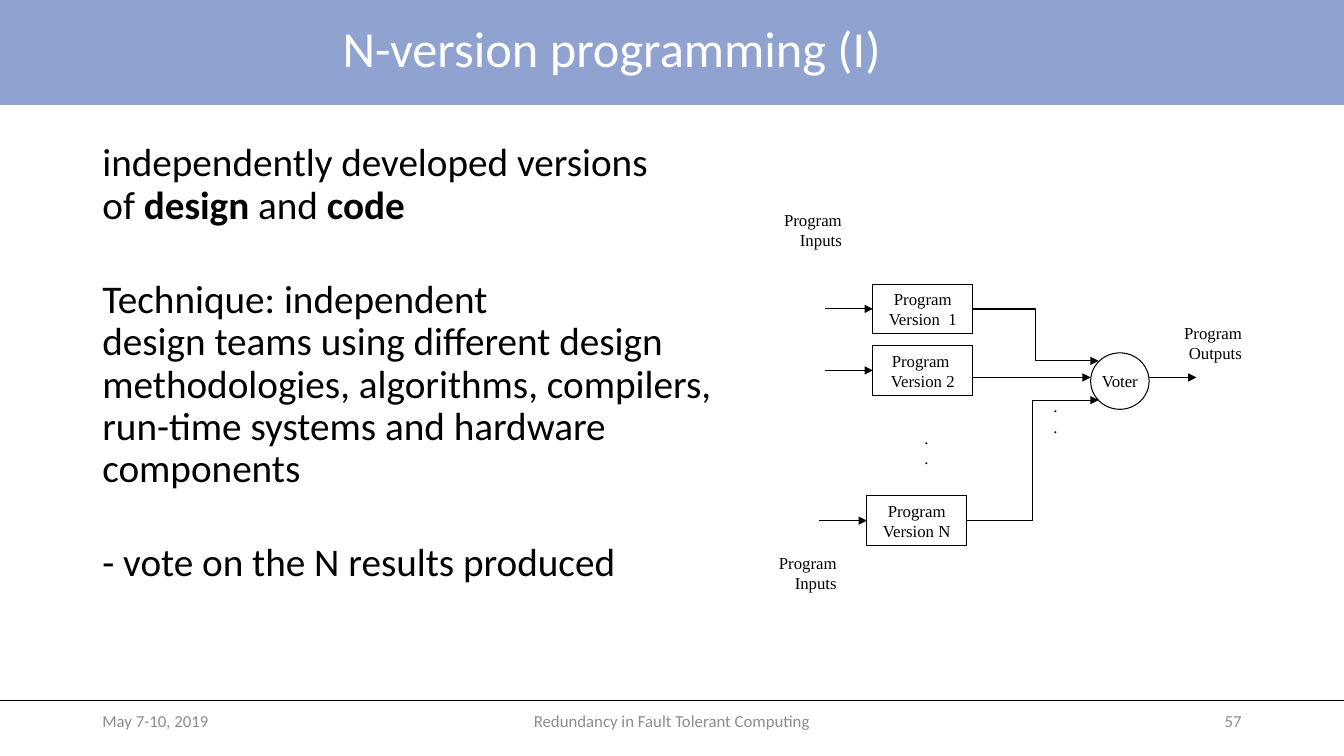
"""Build the N-version programming slide; positions are percentages of the slide size."""
from lxml.etree import SubElement
from pptx import Presentation
from pptx.dml.color import RGBColor
from pptx.enum.shapes import MSO_CONNECTOR, MSO_SHAPE
from pptx.enum.text import MSO_ANCHOR, MSO_AUTO_SIZE, PP_ALIGN
from pptx.oxml.ns import qn
from pptx.util import Inches, Pt

deck = Presentation()
deck.slide_width, deck.slide_height = Inches(13.333), Inches(7.5)
slide = deck.slides.add_slide(deck.slide_layouts[6])
column, row = deck.slide_width / 100, deck.slide_height / 100
BLACK, GREY, WHITE, BLUE = "000000", "8C8C8C", "FFFFFF", "90A2CF"
LEFT, CENTER, RIGHT = PP_ALIGN.LEFT, PP_ALIGN.CENTER, PP_ALIGN.RIGHT


def write(shape, paragraphs, size, font, color, align, wrap=True, anchor=MSO_ANCHOR.MIDDLE):
    frame = shape.text_frame
    frame.word_wrap, frame.vertical_anchor = wrap, anchor
    for index, pieces in enumerate(paragraphs):
        paragraph = frame.add_paragraph() if index else frame.paragraphs[0]
        paragraph.alignment = align
        for text, bold in pieces:
            for line_index, line in enumerate(text.split("\n")):
                if line_index:
                    paragraph.add_line_break()
                run = paragraph.add_run()
                run.text = line
                run.font.size, run.font.name, run.font.bold = Pt(size), font, bold
                run.font.color.rgb = RGBColor.from_string(color)
    return frame


def connect(kind, x1, y1, x2, y2, width=0.75, arrow=True):
    link = slide.shapes.add_connector(
        kind, int(x1 * column), int(y1 * row), int(x2 * column), int(y2 * row))
    link.line.width = Pt(width)
    link.line.color.rgb = RGBColor.from_string(BLACK)
    properties = link._element.spPr
    if arrow:
        SubElement(link.line._get_or_add_ln(), qn("a:tailEnd"), type="triangle")
    SubElement(properties, qn("a:effectLst"))
    return link


header = slide.shapes.add_shape(MSO_SHAPE.RECTANGLE, 0, 0, deck.slide_width, int(13.87 * row))
header.shadow.inherit = False
header.fill.solid()
header.fill.fore_color.rgb = RGBColor.from_string(BLUE)
header.line.fill.background()
connect(MSO_CONNECTOR.STRAIGHT, 0, 92.67, 100, 92.67, 0.5, False)

title = slide.shapes.add_textbox(0, 0, int(91.05 * column), int(13.6 * row))
title_frame = write(title, [[("N-version programming (I)", False)]], 36, "Calibri", WHITE, CENTER)
title_frame.paragraphs[0].line_spacing = 0.9

points = [
    [("independently developed versions \nof ", False), ("design", True),
     (" and ", False), ("code", True)],
    [("Technique: independent\ndesign teams using different design \n"
      "methodologies, algorithms, compilers, run-time systems and hardware \ncomponents", False)],
    [("- vote on the N results produced", False)],
]
body = slide.shapes.add_textbox(
    int(6.88 * column), int(18.27 * row), int(47.1 * column), int(63.47 * row))
body_frame = write(body, points, 28, "Calibri", BLACK, LEFT, anchor=MSO_ANCHOR.TOP)
for index, point in enumerate(body_frame.paragraphs):
    point.line_spacing = 0.9
    point.space_before = Pt(37 if index else 0)

for x, width, text, align in [
    (6.88, 22.5, "May 7-10, 2019", LEFT),
    (33.12, 33.75, "Redundancy in Fault Tolerant Computing", CENTER),
    (70.62, 22.5, "57", RIGHT),
]:
    footer = slide.shapes.add_textbox(
        int(x * column), int(92.67 * row), int(width * column), int(5.33 * row))
    write(footer, [[(text, False)]], 12, "Calibri", GREY, align)

for x, y, width, lines in [
    (57.53, 27.07, 5.85, ["Program", "Inputs"]),
    (57.15, 72.4, 5.85, ["Program", "Inputs"]),
    (87.3, 42, 5.85, ["Program", "Outputs"]),
    (68.03, 55.87, 1.8, [".", "."]),
    (77.62, 51.73, 1.8, [".", "."]),
]:
    label = slide.shapes.add_textbox(
        int(x * column), int(y * row), int(width * column), int(6.8 * row))
    label_frame = write(label, [[(line, False)] for line in lines], 12, "Times New Roman",
                        BLACK, RIGHT, False, MSO_ANCHOR.TOP)
    label_frame.auto_size = MSO_AUTO_SIZE.SHAPE_TO_FIT_TEXT

version_width, version_height, lead = 7.43, 6.53, 3.53
nodes = []
for kind, x, y, width, height, lines in [
    (MSO_SHAPE.RECTANGLE, 64.95, 37.6, version_width, version_height, ["Program", "Version  1"]),
    (MSO_SHAPE.RECTANGLE, 64.95, 45.73, version_width, version_height, ["Program ", "Version 2"]),
    (MSO_SHAPE.RECTANGLE, 64.5, 65.6, version_width, version_height, ["Program", "Version N"]),
    (MSO_SHAPE.OVAL, 81.15, 46.67, 4.35, 7.47, ["Voter"]),
]:
    node = slide.shapes.add_shape(
        kind, int(x * column), int(y * row), int(width * column), int(height * row))
    node.shadow.inherit = False
    node.fill.background()
    node.line.width = Pt(0.75)
    node.line.color.rgb = RGBColor.from_string(BLACK)
    write(node, [[(line, False)] for line in lines], 12, "Times New Roman", BLACK, CENTER, False)
    nodes.append(node)

for version in nodes[:3]:
    x, y = version.left / column, version.top / row + version_height / 2
    program_input = connect(MSO_CONNECTOR.STRAIGHT, x - lead, y, x, y)
    program_input.end_connect(version, 1)

for kind, x1, y1, x2, y2 in [
    (MSO_CONNECTOR.ELBOW, 72.38, 40.87, 81.75, 47.73),
    (MSO_CONNECTOR.STRAIGHT, 72.38, 49.93, 81.15, 49.93),
    (MSO_CONNECTOR.ELBOW, 71.93, 68.87, 81.75, 52.93),
    (MSO_CONNECTOR.STRAIGHT, 85.5, 49.93, 85.5 + lead, 49.93),
]:
    connect(kind, x1, y1, x2, y2)

deck.save("out.pptx")
